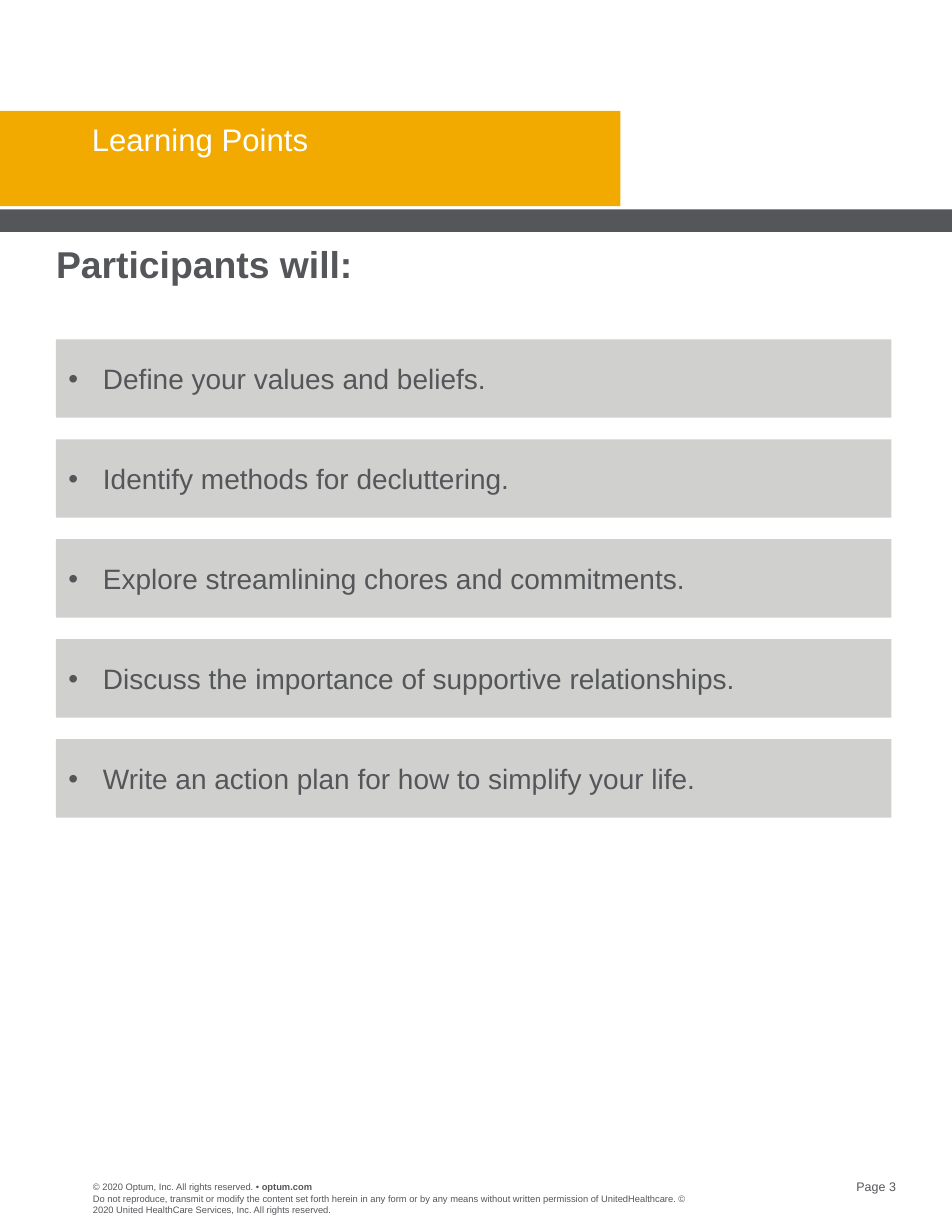
from lxml.etree import SubElement
from pptx import Presentation
from pptx.dml.color import RGBColor
from pptx.enum.shapes import MSO_SHAPE
from pptx.enum.text import MSO_ANCHOR, MSO_AUTO_SIZE, PP_ALIGN
from pptx.oxml.ns import qn
from pptx.util import Inches, Pt

COLORS = {"amber": "F2AA00", "slate": "55565A", "silver": "D0D0CE", "white": "FFFFFF"}
POINTS = [
    "Define your values and beliefs.",
    "Identify methods for decluttering.",
    "Explore streamlining chores and commitments.",
    "Discuss the importance of supportive relationships.",
    "Write an action plan for how to simplify your life.",
]
FIRST_TOP, POINT_STEP = 3.03, 0.8925


class PageBuilder:
    """Holds the style and the current slide."""

    font_name = "Arial"

    def __init__(self, page):
        self.page = page

    def color(self, name):
        return RGBColor.from_string(COLORS[name])

    def span(self, para, text, size, color="slate", bold=False):
        span = para.add_run()
        span.text = text
        formats = {"name": self.font_name, "size": Pt(size), "bold": bold}
        for key, value in formats.items():
            setattr(span.font, key, value)
        span.font.color.rgb = self.color(color)

    def frame(self, shape, margins, **formats):
        frame = shape.text_frame
        sides = ("margin_left", "margin_top", "margin_right", "margin_bottom")
        formats.update(zip(sides, map(Inches, margins)), word_wrap=True)
        for key, value in formats.items():
            setattr(frame, key, value)
        return frame.paragraphs[0]

    def text(self, area, spans, size, color="slate", **formats):
        box = self.page.shapes.add_textbox(*map(Inches, area))
        para = self.frame(box, (0, 0, 0, 0), auto_size=MSO_AUTO_SIZE.SHAPE_TO_FIT_TEXT)
        for key, value in formats.items():
            setattr(para, key, value)
        for text, bold in spans:
            self.span(para, text, size, color, bold)

    def bar(self, area, color):
        bar = self.page.shapes.add_shape(MSO_SHAPE.RECTANGLE, *map(Inches, area))
        bar.shadow.inherit = False
        bar.fill.solid()
        bar.fill.fore_color.rgb = self.color(color)
        bar.line.fill.background()
        return bar

    def point(self, area, text):
        bar = self.bar(area, "silver")
        para = self.frame(bar, (0.11, 0.1, 0.11, 0.1), vertical_anchor=MSO_ANCHOR.MIDDLE)
        para.alignment = PP_ALIGN.LEFT
        # Hanging bullet
        props = para._p.get_or_add_pPr()
        props.set("marL", str(Inches(0.31)))
        props.set("indent", str(-Inches(0.31)))
        tint = SubElement(props, qn("a:buClr"))
        SubElement(tint, qn("a:srgbClr"), val=COLORS["slate"])
        SubElement(props, qn("a:buFont"), typeface=self.font_name)
        SubElement(props, qn("a:buChar"), char="•")
        self.span(para, text, 18)


def main():
    deck = Presentation()
    deck.slide_width, deck.slide_height = Inches(8.5), Inches(11)
    builder = PageBuilder(deck.slides.add_slide(deck.slide_layouts[6]))

    # Header band and title
    builder.bar((0, 0.99, 5.54, 0.85), "amber")
    builder.bar((0, 1.87, 8.5, 0.2), "slate")
    builder.text((0.82, 1.11, 4.5, 0.61), [("Learning Points", False)], 20, "white",
                 line_spacing=0.9)

    # Learning points
    builder.text((0.5, 2.15, 7.49, 0.4), [("Participants will:", True)], 24)
    for index, text in enumerate(POINTS):
        builder.point((0.5, FIRST_TOP + index * POINT_STEP, 7.46, 0.7), text)

    # Footer
    builder.text((0.83, 10.55, 2, 0.1),
                 [("© 2020 Optum, Inc. All rights reserved. • ", False), ("optum.com", True)], 6)
    builder.text((0.83, 10.65, 5.3, 0.2),
                 [("Do not reproduce, transmit or modify the content set forth herein in any "
                   "form or by any means without written permission of UnitedHealthcare. "
                   "© 2020 United HealthCare Services, Inc. All rights reserved.", False)], 6)
    builder.text((7.19, 10.53, 0.81, 0.13), [("Page 3", False)], 8,
                 alignment=PP_ALIGN.RIGHT)

    deck.save("out.pptx")


if __name__ == "__main__":
    main()
